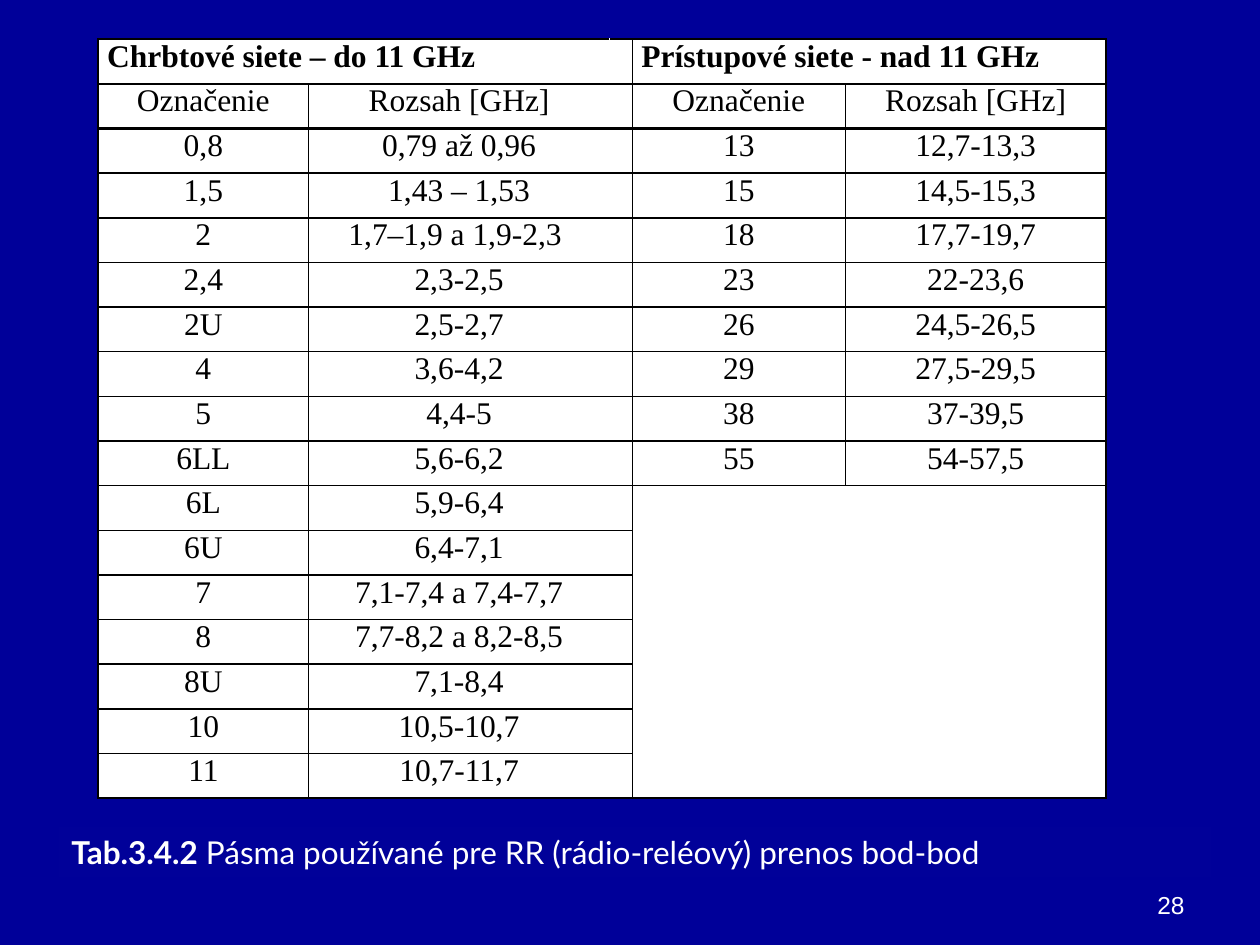
from dataclasses import dataclass
from typing import Any

from lxml import etree
from pptx import Presentation
from pptx import util as u
from pptx.dml.color import RGBColor
from pptx.enum import shapes, text
from pptx.oxml import ns

NAVY = RGBColor(0x00, 0x00, 0x99)
CAPTION_BLUE = RGBColor(0x01, 0x01, 0x99)
WHITE = RGBColor(0xFF, 0xFF, 0xFF)
BLACK = RGBColor(0x00, 0x00, 0x00)

TABLE_FONT = {"name": "Times New Roman", "size": u.Pt(18)}
CAPTION_FONT = {"name": "Lato", "size": u.Pt(18)}
NUMBER_FONT = {"name": "Arial", "size": u.Pt(14)}
CELL_MARGINS = {
    "margin_left": u.Cm(0.18),
    "margin_right": u.Cm(0.18),
    "margin_top": 0,
    "margin_bottom": 0,
}

COLUMN_WIDTHS = (4.24, 6.07, 0.46, 4.29, 5.26)
ROW_HEIGHT = 0.9
BACKBONE_LABEL, BACKBONE_RANGE, SPACER, ACCESS_LABEL, ACCESS_RANGE = range(5)
TITLE_ROW, HEADING_ROW, FIRST_BAND_ROW = range(3)


@dataclass(frozen=True)
class Band:
    label: str
    frequencies: str


HEADING = Band("Označenie", "Rozsah [GHz]")
BACKBONE_BANDS = (
    Band("0,8", "0,79 až 0,96"),
    Band("1,5", "1,43 – 1,53"),
    Band("2", "1,7–1,9 a 1,9-2,3 "),
    Band("2,4", "2,3-2,5"),
    Band("2U", "2,5-2,7"),
    Band("4", "3,6-4,2"),
    Band("5", "4,4-5"),
    Band("6LL", "5,6-6,2"),
    Band("6L", "5,9-6,4"),
    Band("6U", "6,4-7,1"),
    Band("7", "7,1-7,4 a 7,4-7,7"),
    Band("8", "7,7-8,2 a 8,2-8,5"),
    Band("8U", "7,1-8,4"),
    Band("10", "10,5-10,7"),
    Band("11", "10,7-11,7"),
)
ACCESS_BANDS = (
    Band("13", "12,7-13,3"),
    Band("15", "14,5-15,3"),
    Band("18", "17,7-19,7"),
    Band("23", "22-23,6"),
    Band("26", "24,5-26,5"),
    Band("29", "27,5-29,5"),
    Band("38", "37-39,5"),
    Band("55", "54-57,5"),
)


def set_values(target: Any, values: dict[str, Any]) -> None:
    for name, value in values.items():
        setattr(target, name, value)


def add_span(para: Any, words: str, font: dict[str, Any], color: RGBColor,
             bold: bool = False) -> None:
    span = para.add_run()
    span.text = words
    set_values(span.font, font | {"bold": bold})
    span.font.color.rgb = color


def write_cell(cell: Any, words: str, title: bool = False) -> None:
    para = cell.text_frame.paragraphs[0]
    para.alignment = text.PP_ALIGN.LEFT if title else text.PP_ALIGN.CENTER
    add_span(para, words, TABLE_FONT, BLACK, bold=title)


def write_bands(table: Any, bands: tuple[Band, ...], column: int, range_column: int) -> None:
    for row, band in enumerate((HEADING, *bands), start=HEADING_ROW):
        write_cell(table.cell(row, column), band.label)
        write_cell(table.cell(row, range_column), band.frequencies)


def add_border(cell: Any, side: str, color: RGBColor, width: float) -> None:
    properties = cell._tc.get_or_add_tcPr()
    line = etree.SubElement(properties, ns.qn(f"a:ln{side}"), w=str(u.Pt(width)))
    fill = etree.SubElement(line, ns.qn("a:solidFill"))
    etree.SubElement(fill, ns.qn("a:srgbClr"), val=str(color))


def style_cell(cell: Any, row: int, column: int) -> None:
    """Hide the line beside the spacer and thicken the one below the headings."""
    set_values(cell, CELL_MARGINS)
    if not cell.is_spanned:
        borders = {
            "L": (WHITE if column == SPACER else BLACK, 1),
            "R": (WHITE if column == BACKBONE_RANGE else BLACK, 1),
            "T": (BLACK, 1.5 if row == FIRST_BAND_ROW else 1),
            "B": (BLACK, 1.5 if row == HEADING_ROW else 1),
        }
        if cell.is_merge_origin and column == BACKBONE_LABEL:
            borders["R"] = (WHITE, 1)
        for side, (color, width) in borders.items():
            add_border(cell, side, color, width)
    cell.fill.solid()
    cell.fill.fore_color.rgb = WHITE


def add_band_table(page: Any) -> None:
    row_count = FIRST_BAND_ROW + len(BACKBONE_BANDS)
    table = page.shapes.add_table(
        row_count, len(COLUMN_WIDTHS), u.Cm(1.98), u.Cm(0.79),
        u.Cm(sum(COLUMN_WIDTHS)), u.Cm(row_count * ROW_HEIGHT),
    ).table
    set_values(table, {"first_row": False, "horz_banding": False})
    for column, width in zip(table.columns, COLUMN_WIDTHS):
        column.width = u.Cm(width)
    for row in table.rows:
        row.height = u.Cm(ROW_HEIGHT)

    first_empty_row = FIRST_BAND_ROW + len(ACCESS_BANDS)
    merges = (
        (TITLE_ROW, BACKBONE_LABEL, TITLE_ROW, BACKBONE_RANGE),
        (TITLE_ROW, ACCESS_LABEL, TITLE_ROW, ACCESS_RANGE),
        (first_empty_row, ACCESS_LABEL, row_count - 1, ACCESS_RANGE),
    )
    for top, left, bottom, right in merges:
        table.cell(top, left).merge(table.cell(bottom, right))

    write_cell(table.cell(TITLE_ROW, BACKBONE_LABEL), "Chrbtové siete – do 11 GHz", title=True)
    write_cell(table.cell(TITLE_ROW, ACCESS_LABEL), "Prístupové siete - nad 11 GHz", title=True)
    write_bands(table, BACKBONE_BANDS, BACKBONE_LABEL, BACKBONE_RANGE)
    write_bands(table, ACCESS_BANDS, ACCESS_LABEL, ACCESS_RANGE)
    for row in range(row_count):
        for column in range(len(COLUMN_WIDTHS)):
            style_cell(table.cell(row, column), row, column)


def add_caption(page: Any) -> None:
    box = page.shapes.add_shape(
        shapes.MSO_SHAPE.RECTANGLE, u.Cm(1.19), u.Cm(16.66), u.Cm(23.22), u.Cm(1.02))
    box.shadow.inherit = False
    box.fill.solid()
    box.fill.fore_color.rgb = CAPTION_BLUE
    box.line.fill.background()
    set_values(box.text_frame, {
        "word_wrap": True,
        "vertical_anchor": text.MSO_ANCHOR.TOP,
        "auto_size": text.MSO_AUTO_SIZE.SHAPE_TO_FIT_TEXT,
    })
    para = box.text_frame.paragraphs[0]
    para.alignment = text.PP_ALIGN.LEFT
    add_span(para, "Tab.3.4.2", CAPTION_FONT, WHITE, bold=True)
    add_span(para, " Pásma používané pre RR (rádio-reléový) prenos bod-bod", CAPTION_FONT, WHITE)


def add_page_number(page: Any) -> None:
    box = page.shapes.add_textbox(u.Cm(18.21), u.Cm(17.35), u.Cm(5.92), u.Cm(1.32))
    set_values(box.text_frame, {"word_wrap": True, "vertical_anchor": text.MSO_ANCHOR.BOTTOM})
    para = box.text_frame.paragraphs[0]
    para.alignment = text.PP_ALIGN.RIGHT
    add_span(para, "28", NUMBER_FONT, WHITE)


def main() -> None:
    deck = Presentation()
    set_values(deck, {"slide_width": u.Cm(25.4), "slide_height": u.Cm(19.05)})
    page = deck.slides.add_slide(deck.slide_layouts[6])
    page.background.fill.solid()
    page.background.fill.fore_color.rgb = NAVY
    add_page_number(page)
    add_caption(page)
    add_band_table(page)
    deck.save("out.pptx")


if __name__ == "__main__":
    main()
